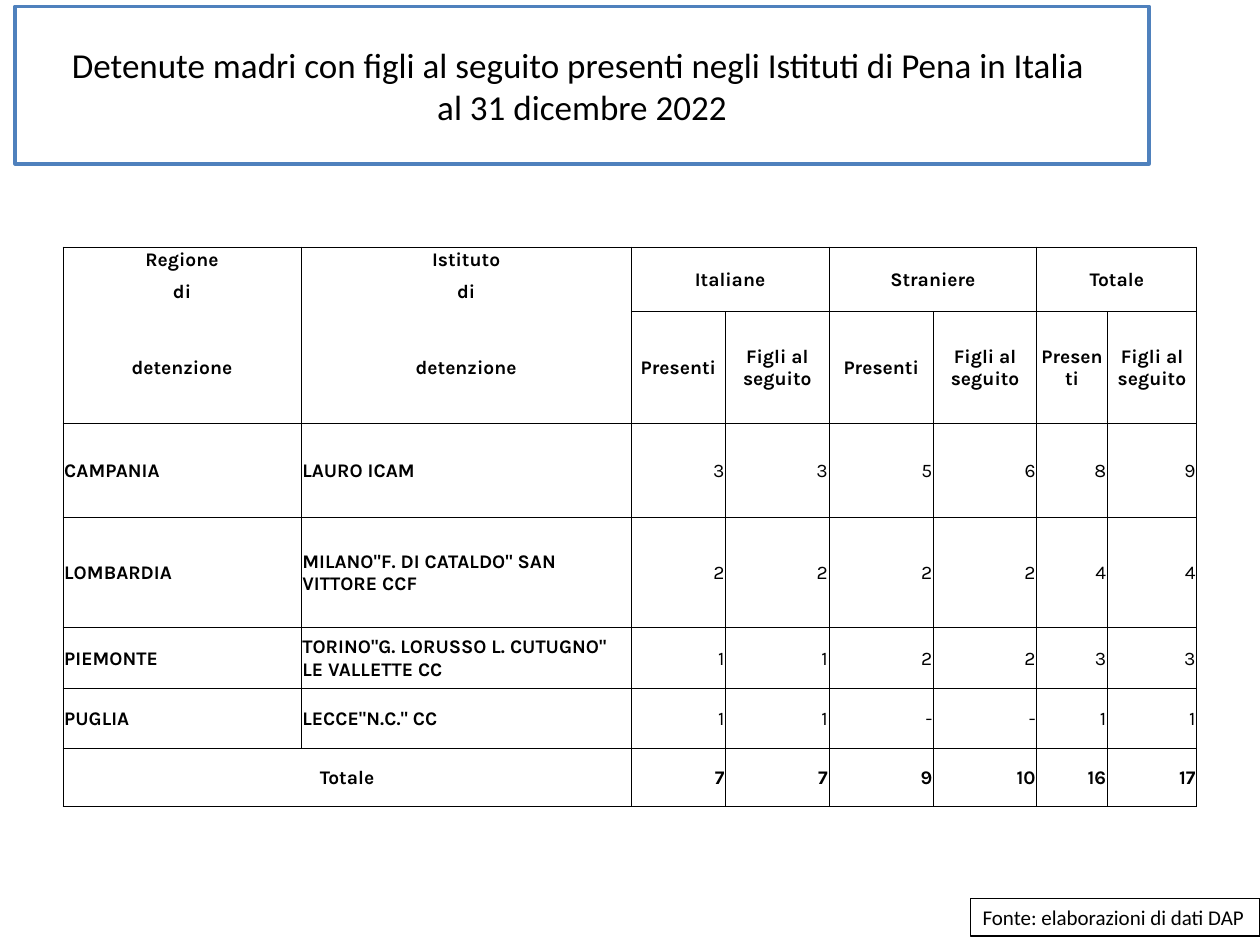
import pptx
import pptx.util
import pptx.dml.color
import pptx.enum.shapes
import pptx.enum.text
import pptx.oxml
import pptx.oxml.ns
from pptx.util import Inches

ALIGN = pptx.enum.text.PP_ALIGN
ANCHOR = pptx.enum.text.MSO_ANCHOR
BLACK = "000000"
WHITE = "FFFFFF"
BLUE = "4F81BD"


def colour(code):
    return pptx.dml.color.RGBColor.from_string(code)


def write(frame, text, font="Calibri", size=12, bold=False, align=ALIGN.LEFT):
    """Put one paragraph in a text frame; a line feed is a line break."""
    para = frame.paragraphs[0]
    para.alignment = align
    for index, line in enumerate(text.split("\n")):
        if index:
            para.add_line_break()
        span = para.add_run()
        span.text = line
        span.font.name = font
        span.font.size = pptx.util.Pt(size)
        span.font.bold = bold
        span.font.color.rgb = colour(BLACK)


class SlideWriter:
    table_font = "Karla"
    table_size = 11
    border = 0.5

    def __init__(self, page):
        self.page = page

    def box(self, left, top, width, height, text, line, weight, wrap=True,
            anchor=ANCHOR.MIDDLE, **style):
        box = self.page.shapes.add_shape(
            pptx.enum.shapes.MSO_SHAPE.RECTANGLE,
            Inches(left), Inches(top), Inches(width), Inches(height))
        box.shadow.inherit = False
        box.fill.solid()
        box.fill.fore_color.rgb = colour(WHITE)
        box.line.color.rgb = colour(line)
        box.line.width = pptx.util.Pt(weight)
        frame = box.text_frame
        frame.word_wrap = wrap
        frame.vertical_anchor = anchor
        if not wrap:
            frame.auto_size = pptx.enum.text.MSO_AUTO_SIZE.SHAPE_TO_FIT_TEXT
        write(frame, text, **style)
        return box

    def table(self, left, top, widths, heights):
        frame = self.page.shapes.add_table(
            len(heights), len(widths), Inches(left), Inches(top),
            Inches(sum(widths)), Inches(sum(heights)))
        table = frame.table
        table.first_row = table.horz_banding = False
        for column, width in zip(table.columns, widths):
            column.width = Inches(width)
        for row, height in zip(table.rows, heights):
            row.height = Inches(height)
        return table

    def cell(self, cell, text, bold, align, hidden_sides=""):
        cell.margin_left = cell.margin_right = cell.margin_top = Inches(0.01)
        cell.margin_bottom = 0
        cell.vertical_anchor = ANCHOR.MIDDLE
        write(cell.text_frame, text, self.table_font, self.table_size, bold, align)
        self.borders(cell, hidden_sides)
        cell.fill.background()

    def borders(self, cell, hidden_sides):
        properties = cell._tc.get_or_add_tcPr()
        solid = f'<a:solidFill><a:srgbClr val="{BLACK}"/></a:solidFill>'
        for side in "LRTB":
            paint = "<a:noFill/>" if side in hidden_sides else solid
            properties.append(pptx.oxml.parse_xml(
                f'<a:ln{side} {pptx.oxml.ns.nsdecls("a")} '
                f'w="{pptx.util.Pt(self.border)}">{paint}</a:ln{side}>'))


WIDTHS = [1.89, 2.62, 0.75, 0.82, 0.83, 0.82, 0.56, 0.71]
HEIGHTS = [0.17, 0.32, 0.89, 0.74, 0.88, 0.48, 0.48, 0.46]
HEADER_ROWS = 3
LABEL_COLUMNS = 2
ROWS = [
    ["Regione", "Istituto", "Italiane", "", "Straniere", "", "Totale", ""],
    ["di", "di"] + [""] * 6,
    ["detenzione"] * 2 + ["Presenti", "Figli al seguito"] * 3,
    ["CAMPANIA", "LAURO ICAM", "3", "3", "5", "6", "8", "9"],
    ["LOMBARDIA", 'MILANO"F. DI CATALDO" SAN VITTORE CCF', "2", "2", "2", "2", "4", "4"],
    ["PIEMONTE", 'TORINO"G. LORUSSO L. CUTUGNO" LE VALLETTE CC', "1", "1", "2", "2", "3", "3"],
    ["PUGLIA", 'LECCE"N.C." CC', "1", "1", "-", "-", "1", "1"],
    ["Totale", "", "7", "7", "9", "10", "16", "17"],
]
TOTAL_ROW = len(ROWS) - 1


def fill_table(writer, table):
    # Merged headings and total label
    for column in range(LABEL_COLUMNS, len(WIDTHS), 2):
        table.cell(0, column).merge(table.cell(1, column + 1))
    table.cell(TOTAL_ROW, 0).merge(table.cell(TOTAL_ROW, 1))

    for row, texts in enumerate(ROWS):
        for column, text in enumerate(texts):
            label = column < LABEL_COLUMNS
            header = row < HEADER_ROWS
            if header or (label and row == TOTAL_ROW):
                align = ALIGN.CENTER
            else:
                align = ALIGN.LEFT if label else ALIGN.RIGHT
            # The stacked label headings read as one open cell
            hidden_sides = ("B", "TB", "T")[row] if header and label else ""
            bold = header or label or row == TOTAL_ROW
            writer.cell(table.cell(row, column), text, bold, align, hidden_sides)


def main():
    deck = pptx.Presentation()
    deck.slide_width = Inches(10)
    deck.slide_height = Inches(7.5)
    writer = SlideWriter(deck.slides.add_slide(deck.slide_layouts[6]))

    # Title
    writer.box(0.12, 0.05, 9, 1.25,
               "Detenute madri con figli al seguito presenti negli Istituti di Pena in Italia \n"
               "al 31 dicembre 2022",
               BLUE, 2, size=20, align=ALIGN.CENTER)

    # Source note
    writer.box(7.7, 7.13, 2.3, 0.3, "Fonte: elaborazioni di dati DAP",
               BLACK, 0.75, wrap=False, anchor=ANCHOR.TOP)

    # Table of mothers and children by prison
    fill_table(writer, writer.table(0.5, 1.96, WIDTHS, HEIGHTS))

    deck.save("out.pptx")


if __name__ == "__main__":
    main()
